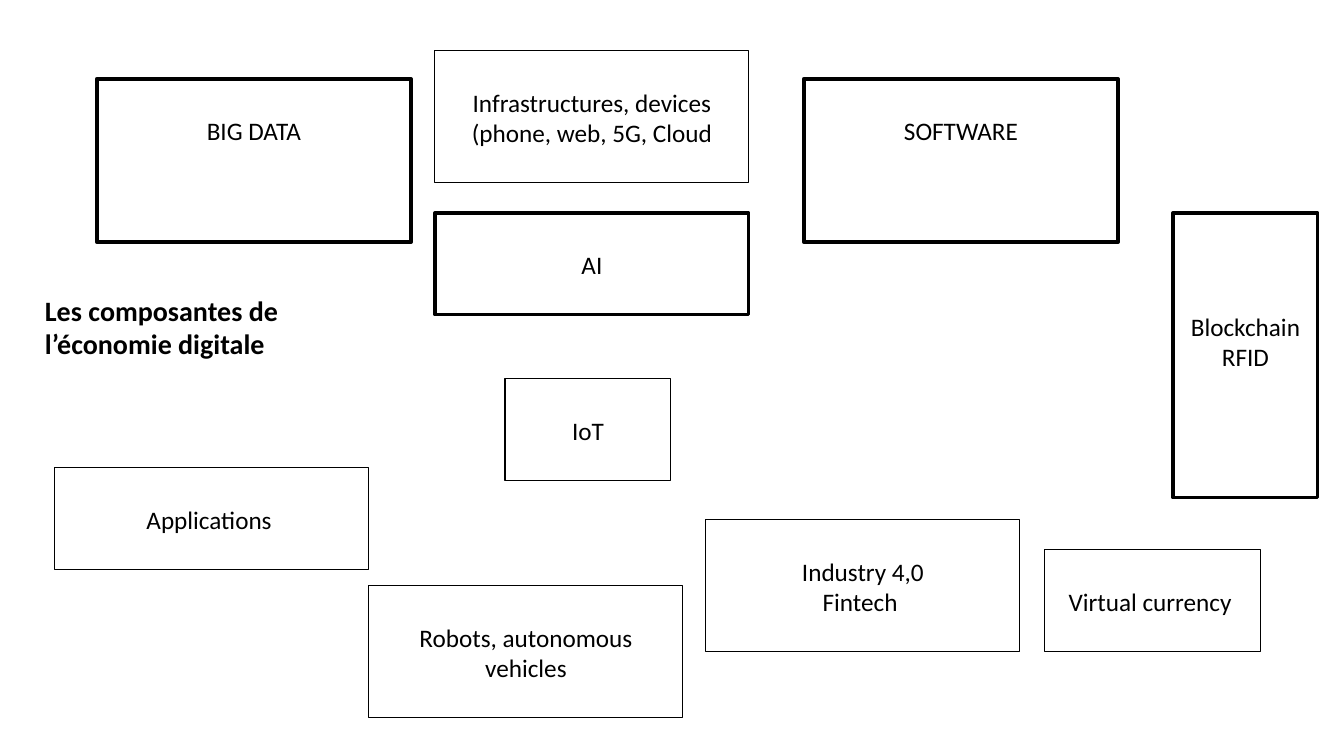
from pptx import Presentation
from pptx.dml.color import RGBColor
from pptx.enum.shapes import MSO_SHAPE as Shape
from pptx.enum.text import MSO_ANCHOR as Anchor, PP_ALIGN as Align
from pptx.util import Emu, Pt

PX = 914400 / 100.8
BLACK = RGBColor(0, 0, 0)
BODY = {"name": "Calibri", "size": Pt(18), "bold": False}
TITLE = {"name": "Calibri", "size": Pt(20), "bold": True}
THIN, MID, THICK = 0.75, 2.25, 3
PAD, ROW = 5, 31  # top inset and height of one text line

# left, top, width, height, line weight, lines of text
BOXES = [
    (97, 79, 314, 163, THICK, ["BIG DATA"]),
    (804, 79, 314, 163, THICK, ["SOFTWARE"]),
    (435, 213, 314, 102, MID, ["AI"]),
    (435, 51, 314, 132, THIN, ["Infrastructures, devices", "(phone, web, 5G, Cloud"]),
    (55, 468, 314, 102, THIN, ["Applications "]),
    (706, 520, 314, 132, THIN, ["Industry 4,0", "Fintech "]),
    (369, 586, 314, 132, THIN, ["Robots, autonomous vehicles"]),
    (505, 379, 166, 102, THIN, ["IoT"]),
    (1045, 550, 216, 102, THIN, ["Virtual currency "]),
]
CHAIN = (1173, 213, 145, 285, MID, ["Blockchain", "RFID"])


def px(*vals):
    return [Emu(round(v * PX)) for v in vals]


def write(shape, lines, style, align, top=PAD):
    frame = shape.text_frame
    form = {"word_wrap": True, "vertical_anchor": Anchor.TOP, "margin_top": px(top)[0]}
    for key, val in form.items():
        setattr(frame, key, val)
    frame.text = "\n".join(lines)
    for para in frame.paragraphs:
        para.alignment = align
        font = para.runs[0].font
        font.color.rgb = BLACK
        for key, val in style.items():
            setattr(font, key, val)


def add_box(slide, left, top, width, height, weight, lines, skip=1):
    """Outlined box whose text starts below the given number of free lines."""
    box = slide.shapes.add_shape(Shape.RECTANGLE, *px(left, top, width, height))
    box.shadow.inherit = False
    box.fill.background()
    box.line.color.rgb = BLACK
    box.line.width = Pt(weight)
    write(box, lines, BODY, Align.CENTER, PAD + skip * ROW)


def add_title(slide, text):
    box = slide.shapes.add_textbox(*px(35, 288, 271, 78))
    write(box, [text], TITLE, Align.LEFT)


def main():
    deck = Presentation()
    deck.slide_width, deck.slide_height = px(1344, 756)
    slide = deck.slides.add_slide(deck.slide_layouts[6])

    # Components of the digital economy
    for box in BOXES:
        add_box(slide, *box)
    add_box(slide, *CHAIN, skip=3)

    # Heading
    add_title(slide, "Les composantes de l’économie digitale")
    deck.save("out.pptx")


if __name__ == "__main__":
    main()
